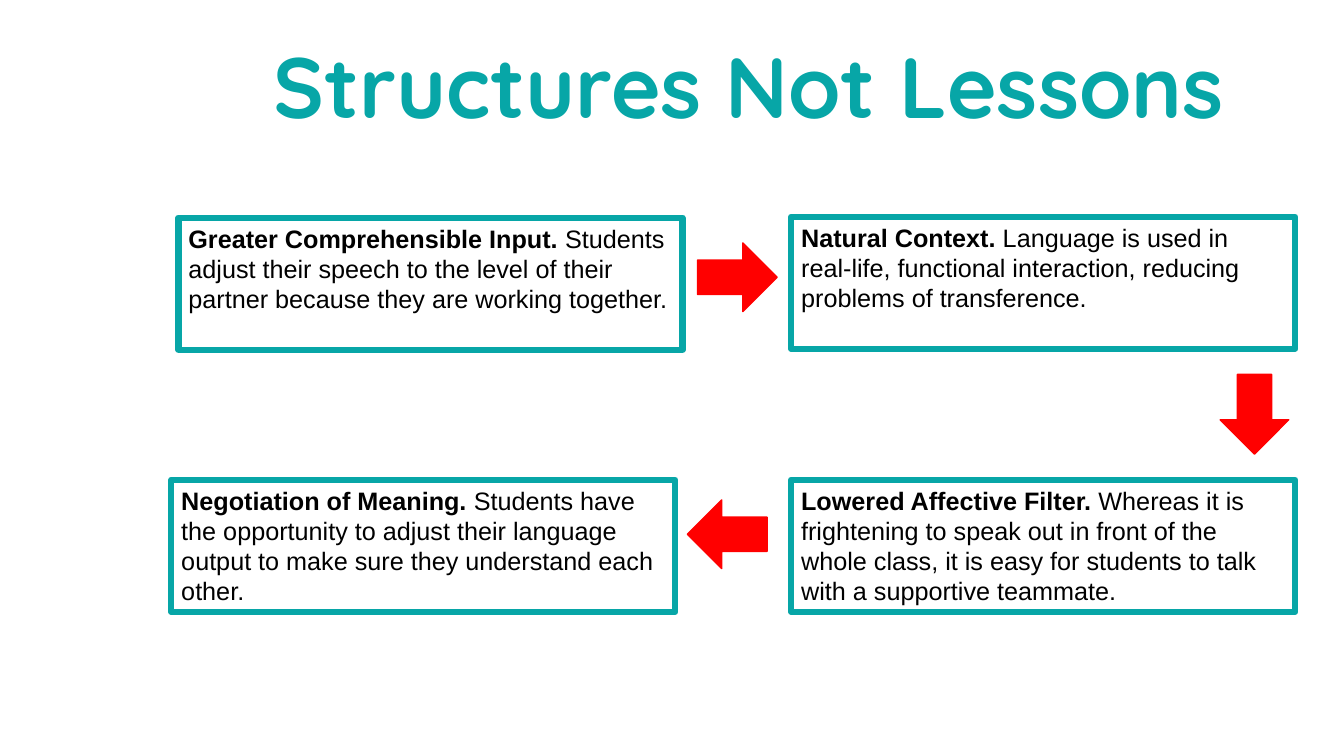
from dataclasses import dataclass

from lxml import etree
from pptx import Presentation
from pptx.dml.color import RGBColor
from pptx.enum.shapes import MSO_SHAPE
from pptx.enum.text import MSO_ANCHOR, PP_ALIGN
from pptx.oxml.ns import qn
from pptx.util import Pt

RECTANGLE = MSO_SHAPE.RECTANGLE
RIGHT_ARROW = MSO_SHAPE.RIGHT_ARROW
TOP = MSO_ANCHOR.TOP
LEFT = PP_ALIGN.LEFT


@dataclass(frozen=True)
class Theme:
    teal: RGBColor = RGBColor(0x07, 0xA6, 0xA7)
    red: RGBColor = RGBColor(0xFF, 0x00, 0x00)
    black: RGBColor = RGBColor(0x00, 0x00, 0x00)
    title_font: str = "Quicksand"
    body_font: str = "Arial"
    title_size: float = 61
    body_size: float = 18
    line_spacing: float = 21.5


THEME = Theme()
TITLE_FORMAT = {"name": THEME.title_font, "size": Pt(THEME.title_size), "bold": True}
BODY_FORMAT = {"name": THEME.body_font, "size": Pt(THEME.body_size)}


def add_span(para, text, color, font_format):
    span = para.add_run()
    span.text = text
    span.font.color.rgb = color
    for name, value in font_format.items():
        setattr(span.font, name, value)


deck = Presentation()
deck.slide_width, deck.slide_height = Pt(960), Pt(540)
page = deck.slides.add_slide(deck.slide_layouts[6])

title = page.shapes.add_textbox(Pt(188.6), Pt(20.2), Pt(760), Pt(81.4))
title.text_frame.word_wrap = True
add_span(title.text_frame.paragraphs[0], "Structures Not Lessons", THEME.teal, TITLE_FORMAT)

# Left, top, heading, explanation
BOX_WIDTH, BOX_HEIGHT = 360, 94.3
RIGHT_COLUMN, BOTTOM_ROW = 565.2, 342.7
benefits = [
    (127.5, 155.5, "Greater Comprehensible Input.",
     "Students adjust their speech to the level of their partner "
     "because they are working together."),
    (RIGHT_COLUMN, 154.8, "Natural Context.",
     "Language is used in real-life, functional interaction, "
     "reducing problems of transference."),
    (122.4, BOTTOM_ROW, "Negotiation of Meaning.",
     "Students have the opportunity to adjust their language output "
     "to make sure they understand each other."),
    (RIGHT_COLUMN, BOTTOM_ROW, "Lowered Affective Filter.",
     "Whereas it is frightening to speak out in front of the whole class, "
     "it is easy for students to talk with a supportive teammate."),
]
for left, top, heading, explanation in benefits:
    box = page.shapes.add_shape(RECTANGLE, Pt(left), Pt(top), Pt(BOX_WIDTH), Pt(BOX_HEIGHT))
    box.shadow.inherit = False
    box.fill.background()
    box.line.color.rgb = THEME.teal
    box.line.width = Pt(4.5)
    etree.SubElement(box.line._get_or_add_ln(), qn("a:round"))

    frame = box.text_frame
    frame.word_wrap = True
    frame.vertical_anchor = TOP
    frame.margin_top = frame.margin_bottom = Pt(4)
    para = frame.paragraphs[0]
    para.alignment = LEFT
    para.line_spacing = Pt(THEME.line_spacing)
    add_span(para, heading, THEME.black, BODY_FORMAT | {"bold": True})
    add_span(para, " " + explanation, THEME.black, BODY_FORMAT | {"bold": False})

# Left, top, rotation in degrees
for left, top, rotation in [(498.2, 173.5, 0), (867.6, 271.4, 90), (491, 357.1, 180)]:
    arrow = page.shapes.add_shape(RIGHT_ARROW, Pt(left), Pt(top), Pt(56.9), Pt(49))
    arrow.rotation = rotation
    arrow.shadow.inherit = False
    arrow.fill.solid()
    arrow.fill.fore_color.rgb = THEME.red
    arrow.line.color.rgb = THEME.red
    arrow.line.width = Pt(1)

deck.save("out.pptx")
